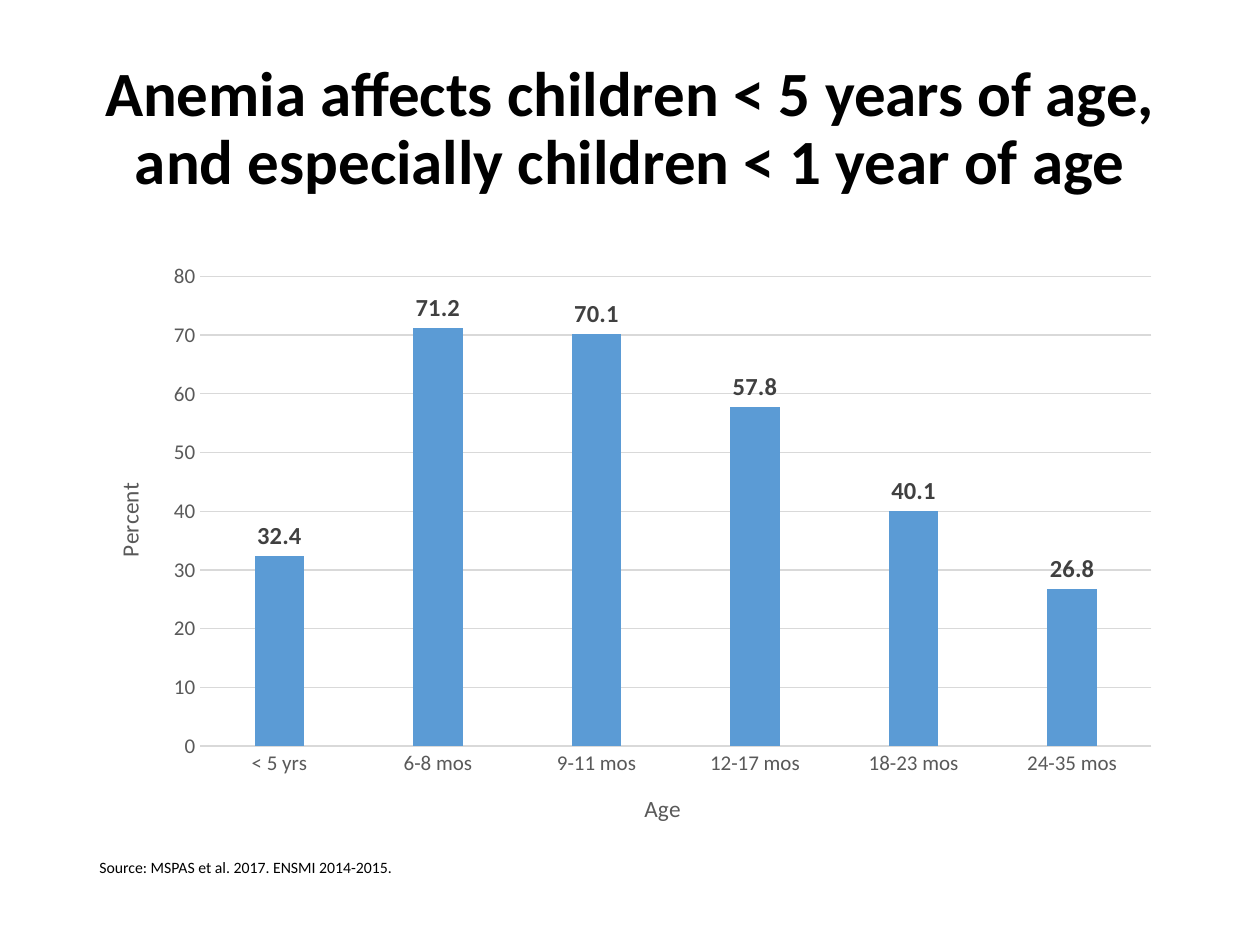
"""Build a slide with a column chart of anemia prevalence by child age."""
from pptx import Presentation
from pptx import util as u
from pptx.chart.data import CategoryChartData
from pptx.dml.color import RGBColor
from pptx.enum import chart as ch, text

TITLE = "Anemia affects children < 5 years of age, and especially children < 1 year of age"
SOURCE = "Source: MSPAS et al. 2017. ENSMI 2014-2015."
PERCENT_BY_AGE = {
    "< 5 yrs": 32.4,
    "6-8 mos": 71.2,
    "9-11 mos": 70.1,
    "12-17 mos": 57.8,
    "18-23 mos": 40.1,
    "24-35 mos": 26.8,
}
FONT = "Calibri"
BLACK, GREY, DARK, RULE, BLUE = "000000", "595959", "404040", "D9D9D9", "5B9BD5"
WIDTH, HEIGHT = 10, 7.5
MARGIN = 0.69
TITLE_TOP, TITLE_HEIGHT = 0.31, 1.45
CHART_TOP, CHART_HEIGHT = 2, 4.76
SOURCE_WIDTH, SOURCE_HEIGHT = 2.59, 0.25


def color(hex_string):
    return RGBColor.from_string(hex_string)


def style(font, size, hex_string, bold=False):
    font.name, font.size, font.bold = FONT, u.Pt(size), bold
    font.color.rgb = color(hex_string)


def rule(line):
    line.color.rgb = color(RULE)
    line.width = u.Pt(0.75)


def box(left, top, width, height):
    return [u.Inches(side) for side in (left, top, width, height)]


def add_title(slide):
    title = slide.shapes.title
    title.left, title.top, title.width, title.height = box(
        MARGIN, TITLE_TOP, WIDTH - 2 * MARGIN, TITLE_HEIGHT)
    frame = title.text_frame
    frame.word_wrap = True
    frame.auto_size = text.MSO_AUTO_SIZE.NONE
    frame.vertical_anchor = text.MSO_ANCHOR.MIDDLE
    heading = frame.paragraphs[0]
    heading.alignment = text.PP_ALIGN.CENTER
    heading.line_spacing = 0.9
    run = heading.add_run()
    run.text = TITLE
    style(run.font, 36, BLACK, True)


def format_axis(axis, name):
    axis.major_tick_mark = axis.minor_tick_mark = ch.XL_TICK_MARK.NONE
    style(axis.tick_labels.font, 12, GREY)
    run = axis.axis_title.text_frame.paragraphs[0].add_run()
    run.text = name
    style(run.font, 13.3, GREY)


def add_prevalence(slide):
    data = CategoryChartData()
    data.categories = list(PERCENT_BY_AGE)
    data.add_series("Series 1", list(PERCENT_BY_AGE.values()))
    prevalence = slide.shapes.add_chart(
        ch.XL_CHART_TYPE.COLUMN_CLUSTERED,
        *box(MARGIN, CHART_TOP, WIDTH - 2 * MARGIN, CHART_HEIGHT), data).chart
    style(prevalence.font, 10, BLACK)
    prevalence.has_legend = prevalence.has_title = False

    ages, percents = prevalence.category_axis, prevalence.value_axis
    format_axis(ages, "Age")
    format_axis(percents, "Percent")
    rule(ages.format.line)
    percents.format.line.fill.background()
    percents.minimum_scale, percents.maximum_scale, percents.major_unit = 0, 80, 10
    rule(percents.major_gridlines.format.line)

    columns = prevalence.plots[0]
    columns.gap_width, columns.overlap = 219, -27
    columns.vary_by_categories = False
    series = columns.series[0]
    series.format.fill.solid()
    series.format.fill.fore_color.rgb = color(BLUE)
    labels = series.data_labels
    labels.show_value = True
    labels.position = ch.XL_LABEL_POSITION.OUTSIDE_END
    style(labels.font, 14, DARK, True)


def add_source(slide):
    frame = slide.shapes.add_textbox(
        *box(MARGIN, CHART_TOP + CHART_HEIGHT, SOURCE_WIDTH, SOURCE_HEIGHT)).text_frame
    frame.word_wrap = False
    frame.auto_size = text.MSO_AUTO_SIZE.SHAPE_TO_FIT_TEXT
    run = frame.paragraphs[0].add_run()
    run.text = SOURCE
    style(run.font, 9, BLACK)


def main():
    deck = Presentation()
    deck.slide_width, deck.slide_height = u.Inches(WIDTH), u.Inches(HEIGHT)
    slide = deck.slides.add_slide(deck.slide_layouts.get_by_name("Title Only"))
    add_title(slide)
    add_prevalence(slide)
    add_source(slide)
    deck.save("out.pptx")


if __name__ == "__main__":
    main()
